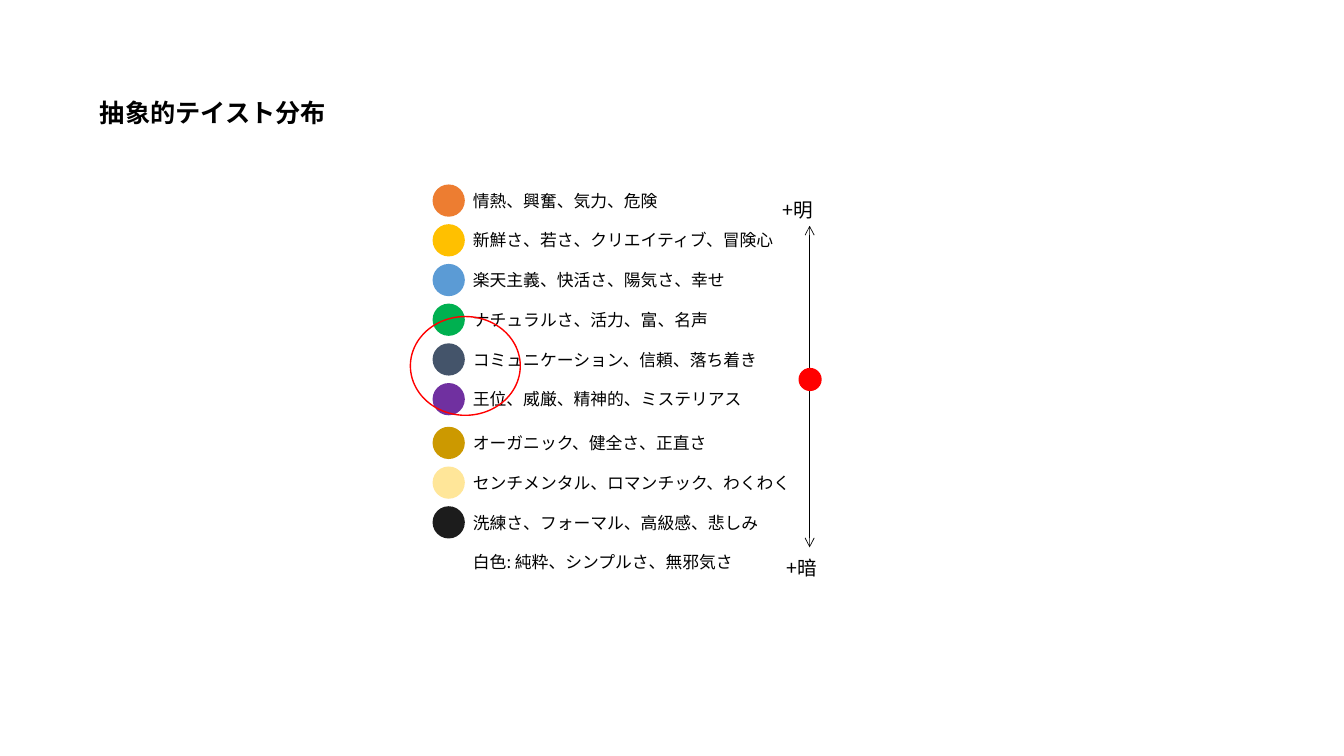
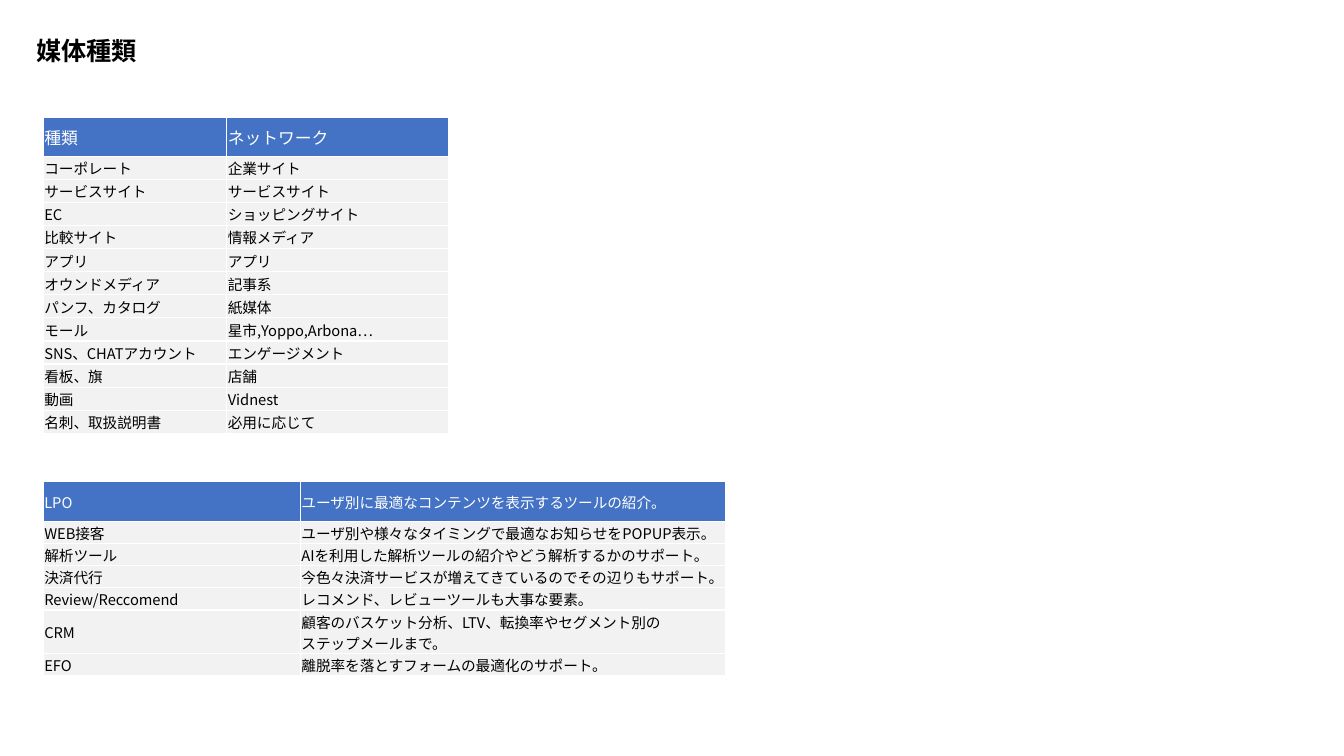
from dataclasses import dataclass

from lxml import etree
from pptx import Presentation
from pptx.dml.color import RGBColor
from pptx.enum.shapes import MSO_CONNECTOR, MSO_SHAPE
from pptx.enum.text import MSO_ANCHOR, MSO_AUTO_SIZE, PP_ALIGN
from pptx.oxml.ns import qn
from pptx.shapes.autoshape import Shape
from pptx.slide import Slide
from pptx.table import _Cell
from pptx.text.text import _Paragraph
from pptx.util import Inches, Pt

ELLIPSE, ROUND_RECT = MSO_SHAPE.OVAL, MSO_SHAPE.ROUNDED_RECTANGLE
STRAIGHT = MSO_CONNECTOR.STRAIGHT
LEFT, TOP, MIDDLE = PP_ALIGN.LEFT, MSO_ANCHOR.TOP, MSO_ANCHOR.MIDDLE
NO_AUTOFIT = MSO_AUTO_SIZE.NONE
TITLE_ONLY = 5

FONT = "Noto Sans CJK JP"
BLACK, WHITE, RED = "000000", "FFFFFF", "FF0000"
HEADER_FILL, BODY_FILL = "4472C4", "F2F2F2"

# Taste list: one swatch and one line of words per row
SWATCH_LEFT, WORDS_LEFT, LIST_TOP = 4.29, 4.69, 1.83
GROUP_ROWS, GROUP_GAP, GROUP_LAST_TOP = 6, 0.04, 3.8
SWATCH_SIZE, ROW_PITCH = 0.32, (GROUP_LAST_TOP - LIST_TOP) / (GROUP_ROWS - 1)
WORDS_DROP, WORDS_WIDTH, WORDS_HEIGHT = 0.04, 3.31, 0.22
AXIS_X, AXIS_TOP, AXIS_BOTTOM = 8.03, 2.24, 5.43
TABLE_LEFT, HEADER_HEIGHT = 0.43, 0.39


@dataclass(frozen=True)
class Taste:
    words: str
    color: str | None = None


@dataclass(frozen=True)
class MediaTable:
    top: float
    height: float
    columns: tuple[float, ...]
    header_size: float
    rows: tuple[tuple[str, str], ...]


TASTES = (
    Taste("情熱、興奮、気力、危険", "ED7D31"),
    Taste("新鮮さ、若さ、クリエイティブ、冒険心", "FFC000"),
    Taste("楽天主義、快活さ、陽気さ、幸せ", "5B9BD5"),
    Taste("ナチュラルさ、活力、富、名声", "00B050"),
    Taste("コミュニケーション、信頼、落ち着き", "44546A"),
    Taste("王位、威厳、精神的、ミステリアス", "7030A0"),
    Taste("オーガニック、健全さ、正直さ", "CC9900"),
    Taste("センチメンタル、ロマンチック、わくわく", "FFE699"),
    Taste("洗練さ、フォーマル、高級感、悲しみ", "1C1C1C"),
    Taste("白色: 純粋、シンプルさ、無邪気さ"),
)

MEDIA = MediaTable(1.16, 3.14, (1.82, 2.2), 12, (
    ("種類", "ネットワーク"),
    ("コーポレート", "企業サイト"),
    ("サービスサイト", "サービスサイト"),
    ("EC", "ショッピングサイト"),
    ("比較サイト", "情報メディア"),
    ("アプリ", "アプリ"),
    ("オウンドメディア", "記事系"),
    ("パンフ、カタログ", "紙媒体"),
    ("モール", "星市,Yoppo,Arbona…"),
    ("SNS、CHATアカウント", "エンゲージメント"),
    ("看板、旗", "店舗"),
    ("動画", "Vidnest"),
    ("名刺、取扱説明書", "必用に応じて"),
))

TOOLS = MediaTable(4.78, 1.85, (2.55, 4.22), 10.5, (
    ("LPO", "ユーザ別に最適なコンテンツを表示するツールの紹介。"),
    ("WEB接客", "ユーザ別や様々なタイミングで最適なお知らせをPOPUP表示。"),
    ("解析ツール", "AIを利用した解析ツールの紹介やどう解析するかのサポート。"),
    ("決済代行", "今色々決済サービスが増えてきているのでその辺りもサポート。"),
    ("Review/Reccomend", "レコメンド、レビューツールも大事な要素。"),
    ("CRM", "顧客のバスケット分析、LTV、転換率やセグメント別の\nステップメールまで。"),
    ("EFO", "離脱率を落とすフォームの最適化のサポート。"),
))


def rgb(color: str) -> RGBColor:
    return RGBColor.from_string(color)


def write(paragraph: _Paragraph, text: str, size: float,
          color: str = BLACK, bold: bool = False) -> None:
    paragraph.text = text
    paragraph.alignment = LEFT
    font = paragraph.font
    font.name, font.size, font.bold = FONT, Pt(size), bold
    font.color.rgb = rgb(color)
    defaults = paragraph._p.pPr.find(qn("a:defRPr"))
    etree.SubElement(defaults, qn("a:ea"), typeface=FONT)


def add_titled_slide(prs: Presentation, title: str, left: float, top: float) -> Slide:
    slide = prs.slides.add_slide(prs.slide_layouts[TITLE_ONLY])
    heading = slide.shapes.title
    heading.left, heading.top = Inches(left), Inches(top)
    heading.width, heading.height = Inches(2.79), Inches(0.4)
    frame = heading.text_frame
    frame.auto_size, frame.vertical_anchor = NO_AUTOFIT, TOP
    write(frame.paragraphs[0], title, 18, bold=True)
    return slide


def add_label(slide: Slide, text: str, left: float, top: float,
              width: float, height: float, size: float) -> None:
    label = slide.shapes.add_shape(ROUND_RECT, *map(Inches, (left, top, width, height)))
    label.adjustments[0] = 0
    label.shadow.inherit = False
    label.fill.background()
    label.line.fill.background()
    frame = label.text_frame
    frame.word_wrap, frame.vertical_anchor = True, TOP
    frame.margin_left = frame.margin_right = frame.margin_top = frame.margin_bottom = 0
    paragraph = frame.paragraphs[0]
    write(paragraph, text, size)
    paragraph.line_spacing, paragraph.space_after = 1.1, Pt(4)


def add_ellipse(slide: Slide, left: float, top: float, width: float, height: float) -> Shape:
    ellipse = slide.shapes.add_shape(ELLIPSE, *map(Inches, (left, top, width, height)))
    ellipse.shadow.inherit = False
    return ellipse


def add_dot(slide: Slide, left: float, top: float, size: float, color: str) -> None:
    dot = add_ellipse(slide, left, top, size, size)
    dot.fill.solid()
    dot.fill.fore_color.rgb = rgb(color)
    dot.line.fill.background()


def add_ring(slide: Slide, left: float, top: float, width: float, height: float) -> None:
    ring = add_ellipse(slide, left, top, width, height)
    ring.fill.background()
    ring.line.color.rgb = rgb(RED)
    ring.line.width = Pt(1)


def add_brightness_axis(slide: Slide) -> None:
    axis = slide.shapes.add_connector(
        STRAIGHT, *map(Inches, (AXIS_X, AXIS_TOP, AXIS_X, AXIS_BOTTOM)))
    axis.line.color.rgb = rgb(BLACK)
    axis.line.width = Pt(0.5)
    line = axis.line._get_or_add_ln()
    for end in ("a:headEnd", "a:tailEnd"):
        etree.SubElement(line, qn(end), type="arrow")
    etree.SubElement(axis._element.spPr, qn("a:effectLst"))


def border_cell(cell: _Cell, color: str) -> None:
    properties = cell._tc.get_or_add_tcPr()
    for side in ("a:lnL", "a:lnR", "a:lnT", "a:lnB"):
        line = etree.SubElement(properties, qn(side), w=str(Pt(1)))
        fill = etree.SubElement(line, qn("a:solidFill"))
        etree.SubElement(fill, qn("a:srgbClr"), val=color)


def fill_cell(cell: _Cell, text: str, size: float, color: str, background: str) -> None:
    border_cell(cell, WHITE)
    cell.fill.solid()
    cell.fill.fore_color.rgb = rgb(background)
    cell.vertical_anchor = MIDDLE
    cell.margin_left = cell.margin_right = cell.margin_top = Inches(0.01)
    cell.margin_bottom = 0
    write(cell.text_frame.paragraphs[0], text, size, color)


def add_media_table(slide: Slide, media: MediaTable) -> None:
    """Share the height below the header among rows by their number of text lines."""
    lines = [1 + max(text.count("\n") for text in row) for row in media.rows[1:]]
    line_height = (media.height - HEADER_HEIGHT) / sum(lines)
    heights = [HEADER_HEIGHT] + [count * line_height for count in lines]
    table = slide.shapes.add_table(
        len(media.rows), len(media.columns),
        *map(Inches, (TABLE_LEFT, media.top, sum(media.columns), media.height))).table
    for column, width in zip(table.columns, media.columns):
        column.width = Inches(width)
    for index, (row, height, texts) in enumerate(zip(table.rows, heights, media.rows)):
        row.height = Inches(height)
        style = (10.5, BLACK, BODY_FILL) if index else (media.header_size, WHITE, HEADER_FILL)
        for cell, text in zip(row.cells, texts):
            fill_cell(cell, text, *style)


def build_taste_slide(prs: Presentation) -> None:
    slide = add_titled_slide(prs, "抽象的テイスト分布", 0.89, 0.92)
    for index, taste in enumerate(TASTES):
        top = LIST_TOP + index * ROW_PITCH + (GROUP_GAP if index >= GROUP_ROWS else 0)
        if taste.color:
            add_dot(slide, SWATCH_LEFT, top, SWATCH_SIZE, taste.color)
        add_label(slide, taste.words, WORDS_LEFT, top + WORDS_DROP,
                  WORDS_WIDTH, WORDS_HEIGHT, 12)
    add_brightness_axis(slide)
    add_label(slide, "+明", 7.76, 1.94, 0.47, 0.26, 14)
    add_label(slide, "+暗", 7.8, 5.49, 0.55, 0.26, 14)
    add_dot(slide, 7.92, 3.65, 0.23, RED)
    add_ring(slide, 4.07, 3.14, 1.09, 0.98)


def build_media_slide(prs: Presentation) -> None:
    slide = add_titled_slide(prs, "媒体種類", 0.26, 0.3)
    for media in (MEDIA, TOOLS):
        add_media_table(slide, media)


def main() -> None:
    prs = Presentation()
    prs.slide_width, prs.slide_height = Inches(13.33), Inches(7.5)
    build_taste_slide(prs)
    build_media_slide(prs)
    prs.save("out.pptx")


if __name__ == "__main__":
    main()
